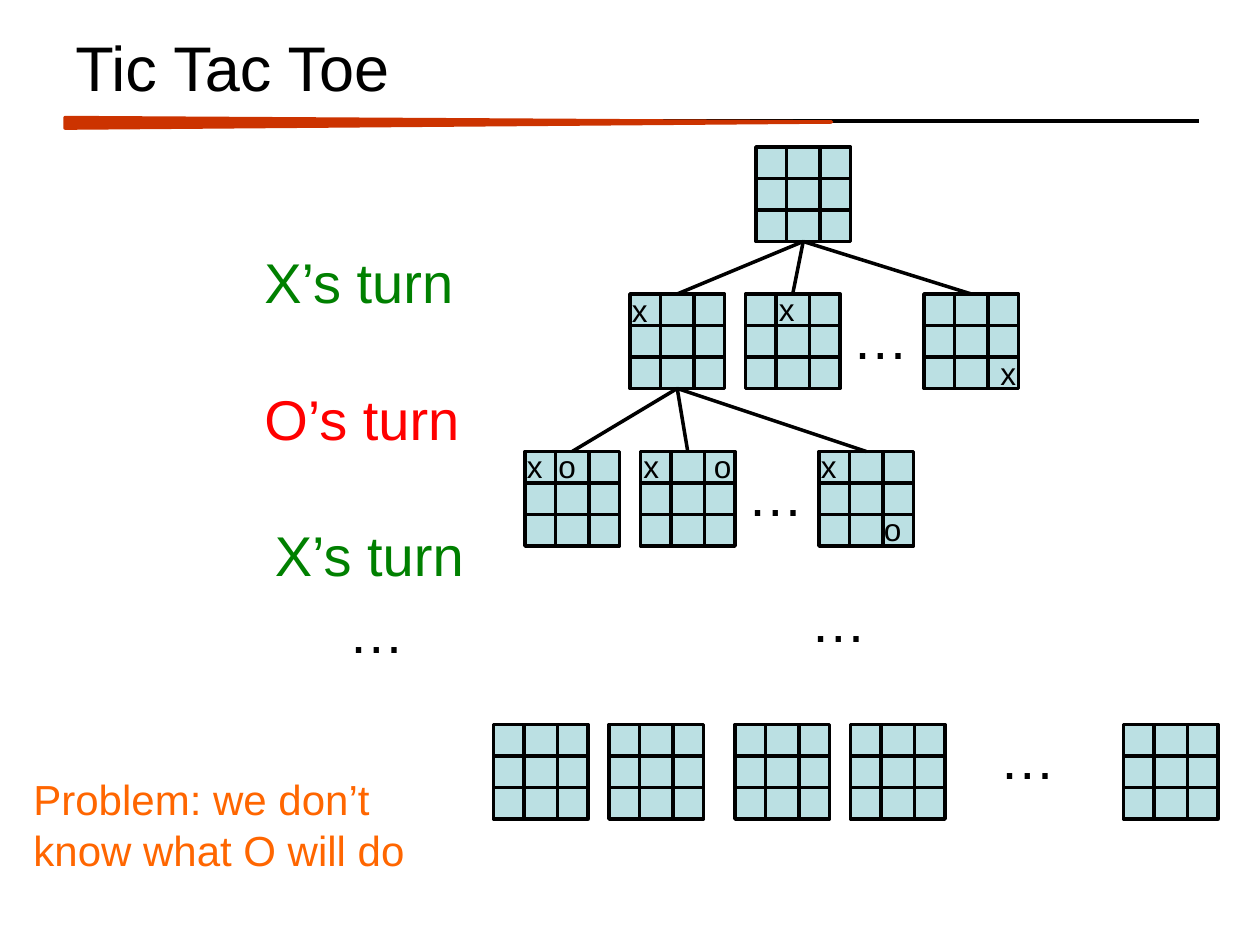
from lxml import etree
from pptx import Presentation
from pptx.dml.color import RGBColor
from pptx.enum.shapes import MSO_CONNECTOR, MSO_SHAPE
from pptx.enum.text import MSO_ANCHOR, MSO_AUTO_SIZE
from pptx.oxml.ns import qn
from pptx.util import Pt

RECTANGLE = MSO_SHAPE.RECTANGLE
TRIANGLE = MSO_SHAPE.ISOSCELES_TRIANGLE
STRAIGHT = MSO_CONNECTOR.STRAIGHT
MIDDLE, TOP_ANCHOR = MSO_ANCHOR.MIDDLE, MSO_ANCHOR.TOP
FIT_SHAPE, NO_FIT = MSO_AUTO_SIZE.SHAPE_TO_FIT_TEXT, MSO_AUTO_SIZE.NONE
TOP_SITE, BOTTOM_SITE = 0, 2

BLACK = RGBColor(0x00, 0x00, 0x00)
PALE_BLUE = RGBColor(0xBB, 0xE0, 0xE3)
RUST = RGBColor(0xCC, 0x33, 0x00)
GREEN = RGBColor(0x00, 0x80, 0x00)
RED = RGBColor(0xFF, 0x00, 0x00)
ORANGE = RGBColor(0xFF, 0x66, 0x00)

PX = 7620  # EMU per px, 120 px to the inch
BOARD = 90
COLUMN_LINES = (29, 61)
ROW_LINES = (30, 60)

# Content: each level of the tree is its top and the left edges of its boards
LEVELS = [
    (140, [720]),
    (280, [600, 710, 880]),
    (430, [500, 610, 780]),
    (690, [470, 580, 700, 810, 1070]),
]
# Parent and child levels; the first board of the parent level branches
BRANCHES = [(0, 1), (1, 2)]
MARKS = [
    ("x", 590, 271), ("x", 730, 270), ("x", 941, 331),
    ("x", 490, 420), ("x", 601, 420), ("x", 770, 420),
    ("o", 520, 420), ("o", 668, 420), ("o", 830, 480),
]
ELLIPSES = [(800, 283), (700, 433), (760, 553), (940, 683), (320, 563)]
TURNS = [
    ("X’s turn", 240, 230, GREEN),
    ("O’s turn", 240, 360, RED),
    ("X’s turn", 250, 490, GREEN),
]

deck = Presentation()
deck.slide_width, deck.slide_height = 1200 * PX, 900 * PX
page = deck.slides.add_slide(deck.slide_layouts[6])


def add_text(text, left, top, width, height, *, size, color=BLACK,
             wrap=True, anchor=TOP_ANCHOR, fit=FIT_SHAPE):
    box = page.shapes.add_textbox(left * PX, top * PX, width * PX, height * PX)
    frame = box.text_frame
    frame.word_wrap = wrap
    frame.auto_size = fit
    frame.vertical_anchor = anchor
    span = frame.paragraphs[0].add_run()
    span.text = text
    span.font.name = "Arial"
    span.font.size = Pt(size)
    span.font.color.rgb = color


def add_shape(shapes, kind, left, top, width, height, fill, line):
    shape = shapes.add_shape(kind, left * PX, top * PX, width * PX, height * PX)
    shape.shadow.inherit = False
    shape.fill.solid()
    shape.fill.fore_color.rgb = fill
    shape.line.color.rgb = line
    shape.line.width = Pt(2)
    return shape


def add_line(shapes, x1, y1, x2, y2):
    line = shapes.add_connector(STRAIGHT, x1 * PX, y1 * PX, x2 * PX, y2 * PX)
    line.line.color.rgb = BLACK
    line.line.width = Pt(2)
    etree.SubElement(line.element.spPr, qn("a:effectLst"))
    return line


def add_board(left, top):
    shapes = page.shapes.add_group_shape().shapes
    square = add_shape(shapes, RECTANGLE, left, top, BOARD, BOARD, PALE_BLUE, BLACK)
    for offset in COLUMN_LINES:
        add_line(shapes, left + offset, top, left + offset, top + BOARD)
    for offset in ROW_LINES:
        add_line(shapes, left + BOARD, top + offset, left, top + offset)
    return square


# Title with its tapered rule
add_line(page.shapes, 62, 115, 1142, 115)
taper = add_shape(page.shapes, TRIANGLE, 422, -248, 10, 730, RUST, RUST)
taper.adjustments[0] = 0.42
taper.rotation = 90
add_text("Tic Tac Toe", 60, 20, 1080, 86, size=36, anchor=MIDDLE, fit=NO_FIT)

# Boards, level by level
boards = [[add_board(left, top) for left in lefts] for top, lefts in LEVELS]

# Branches from a board to its possible next moves
for parent_level, child_level in BRANCHES:
    parent = boards[parent_level][0]
    for child in boards[child_level]:
        branch = add_line(page.shapes, 0, 0, 0, 0)
        branch.begin_connect(parent, BOTTOM_SITE)
        branch.end_connect(child, TOP_SITE)

# Moves, ellipses and turn labels
for mark, left, top in MARKS:
    add_text(mark, left, top, 40, 48, size=18, wrap=False)
for left, top in ELLIPSES:
    add_text("…", left, top, 110, 77, size=32)
for label, left, top, color in TURNS:
    add_text(label, left, top, 220, 77, size=32, color=color)

# Closing remark
add_text("Problem: we don’t know what O will do", 20, 731, 400, 109,
         size=24, color=ORANGE)

deck.save("out.pptx")
